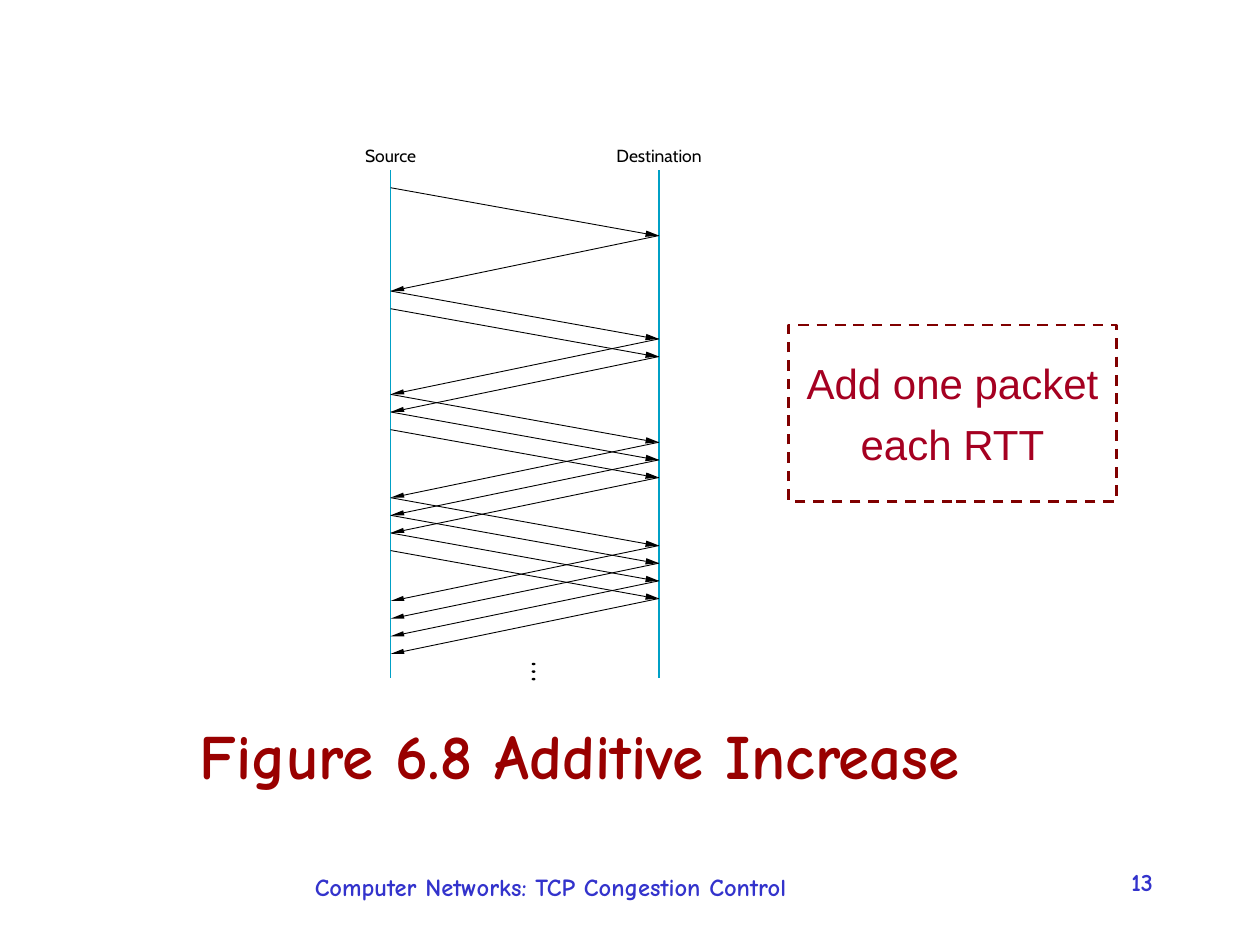
from dataclasses import dataclass

from lxml import etree
from pptx import Presentation
from pptx.dml.color import RGBColor
from pptx.enum.dml import MSO_LINE
from pptx.enum.shapes import MSO_CONNECTOR, MSO_SHAPE
from pptx.enum.text import MSO_ANCHOR, MSO_AUTO_SIZE, PP_ALIGN
from pptx.oxml.ns import qn
from pptx.util import Inches, Pt

STRAIGHT = MSO_CONNECTOR.STRAIGHT
RECTANGLE, OVAL = MSO_SHAPE.RECTANGLE, MSO_SHAPE.OVAL
DASH = MSO_LINE.DASH
MIDDLE = MSO_ANCHOR.MIDDLE
LEFT, CENTER, RIGHT = PP_ALIGN.LEFT, PP_ALIGN.CENTER, PP_ALIGN.RIGHT
NO_FIT = MSO_AUTO_SIZE.NONE
TITLE_ONLY = 5


@dataclass(frozen=True)
class Theme:
    title_font: str = "Comic Neue"
    label_font: str = "Cabin"
    note_font: str = "Arial"
    title_size: int = 36
    note_size: int = 24
    footer_size: int = 14
    label_size: int = 10
    title: str = "990000"
    footer: str = "3333CC"
    ink: str = "000000"
    lane: str = "00A0C6"
    note: str = "A50021"
    note_border: str = "800000"


THEME = Theme()


def color(value):
    return RGBColor.from_string(value)


def style(para, font, size, tint, align=LEFT, bold=False):
    para.alignment = align
    para.font.name = font
    para.font.size = Pt(size)
    para.font.bold = bold
    para.font.color.rgb = color(tint)


def add_line(shapes, start, end, tint, width):
    line = shapes.add_connector(STRAIGHT, *start, *end)
    line.line.color.rgb = color(tint)
    line.line.width = Pt(width)
    etree.SubElement(line._element.spPr, qn("a:effectLst"))


def paint(shape):
    """Fill a small solid mark with ink and remove its outline."""
    shape.fill.solid()
    shape.fill.fore_color.rgb = color(THEME.ink)
    shape.line.fill.background()
    shape.shadow.inherit = False


def add_message(shapes, start, tip, head):
    """Draw a line that ends in a slim head; head lists its two back corners as offsets from the tip."""
    corners = [(tip[0] + dx, tip[1] + dy) for dx, dy in head]
    neck = [sum(values) // 2 for values in zip(*corners)]
    add_line(shapes, start, neck, THEME.ink, 0.5)
    builder = shapes.build_freeform(*tip)
    builder.add_line_segments(corners)
    paint(builder.convert_to_shape())


def add_lane(shapes, name, x, top, height, label_width):
    label_height = Inches(0.17)
    box = shapes.add_textbox(x - label_width // 2, top, label_width, label_height)
    frame = box.text_frame
    frame.margin_left = frame.margin_right = 0
    frame.margin_top = frame.margin_bottom = 0
    frame.word_wrap = False
    frame.text = name
    style(frame.paragraphs[0], THEME.label_font, THEME.label_size, THEME.ink, CENTER)
    add_line(shapes, (x, top + Inches(0.2)), (x, top + height), THEME.lane, 1)


def add_dots(shapes, x, top):
    for index in range(3):
        y = top + index * Inches(0.06)
        paint(shapes.add_shape(OVAL, x, y, Inches(0.03), Inches(0.02)))


def add_sequence(page, left, top, width, height):
    """Each round trip sends one packet more than the one before."""
    shapes = page.shapes.add_group_shape().shapes
    source, destination = left + Inches(0.23), left + width - Inches(0.27)
    add_lane(shapes, "Source", source, top, height, Inches(0.44))
    # The destination label is centred a little to the left of its lane.
    add_lane(shapes, "Destination", destination, top, height, Inches(0.85))

    rounds, round_trip = 4, Inches(0.82)
    packet_gap, one_way = Inches(0.14), Inches(0.38)
    packet_head = [(Inches(-0.11), Inches(0.01)), (Inches(-0.1), Inches(-0.04))]
    ack_head = [(Inches(0.1), Inches(-0.04)), (Inches(0.11), 0)]
    for trip in range(rounds):
        for packet in range(trip + 1):
            sent = top + Inches(0.34) + trip * round_trip + packet * packet_gap
            arrived, returned = sent + one_way, sent + round_trip
            add_message(shapes, (source, sent), (destination, arrived), packet_head)
            add_message(shapes, (destination, arrived), (source, returned), ack_head)
    add_dots(shapes, left + Inches(1.35), top + height - Inches(0.12))


def add_title(page, left, top, width, height):
    title = page.shapes.title
    title.left, title.top, title.width, title.height = left, top, width, height
    frame = title.text_frame
    frame.text = "Figure 6.8 Additive Increase"
    frame.auto_size = NO_FIT
    frame.vertical_anchor = MIDDLE
    style(frame.paragraphs[0], THEME.title_font, THEME.title_size, THEME.title, CENTER, True)


def add_note(page, left, top, width, height):
    box = page.shapes.add_shape(RECTANGLE, left, top, width, height)
    box.shadow.inherit = False
    box.fill.background()
    box.line.color.rgb = color(THEME.note_border)
    box.line.width = Pt(1.5)
    box.line.dash_style = DASH
    frame = box.text_frame
    frame.word_wrap = False
    frame.vertical_anchor = MIDDLE
    frame.text = "Add one packet\neach RTT"
    for para in frame.paragraphs:
        style(para, THEME.note_font, THEME.note_size, THEME.note, CENTER)
    frame.paragraphs[1].space_before = Pt(6)


def add_footer(page, text, left, top, width, height, align=LEFT):
    frame = page.shapes.add_textbox(left, top, width, height).text_frame
    frame.word_wrap = True
    frame.text = text
    style(frame.paragraphs[0], THEME.title_font, THEME.footer_size, THEME.footer, align, True)


def main():
    deck = Presentation()
    deck.slide_width, deck.slide_height = Inches(10), Inches(7.5)
    page = deck.slides.add_slide(deck.slide_layouts[TITLE_ONLY])
    add_footer(page, "Computer Networks: TCP Congestion Control",
               Inches(2.4), Inches(6.87), Inches(5.43), Inches(0.42))
    add_footer(page, "13", Inches(7.75), Inches(6.83), Inches(1.5), Inches(0.5), RIGHT)
    add_title(page, Inches(0.35), Inches(5.48), Inches(8.5), Inches(1.01))
    add_sequence(page, Inches(2.87), Inches(1.15), Inches(2.63), Inches(4.23))
    add_note(page, Inches(6.26), Inches(2.58), Inches(2.6), Inches(1.4))
    deck.save("out.pptx")


if __name__ == "__main__":
    main()
